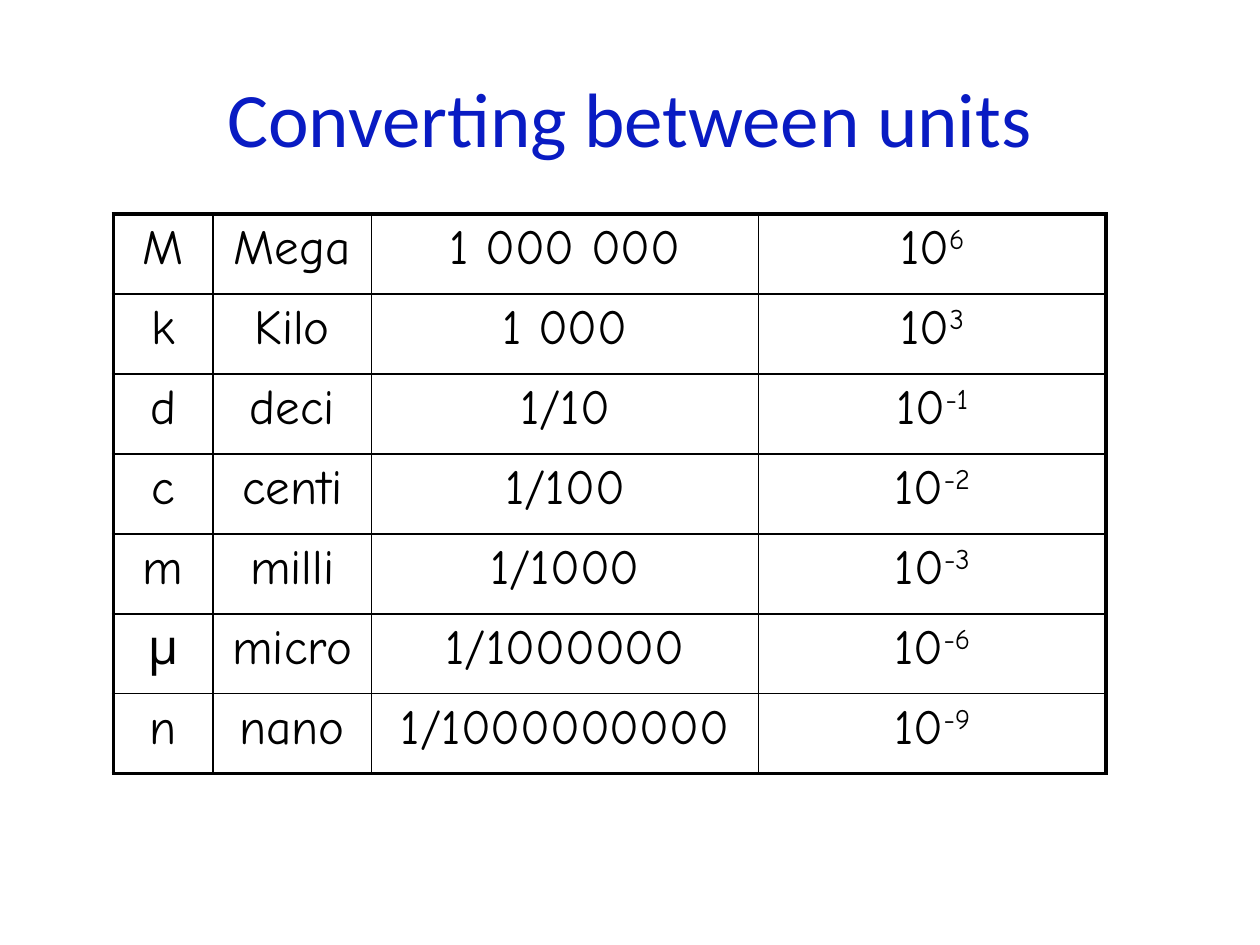
"""Build a slide with a table of metric prefixes and their powers of ten."""
import dataclasses

import lxml.etree
import pptx
import pptx.dml.color
import pptx.enum.text
import pptx.oxml.ns
import pptx.util

Inches = pptx.util.Inches
Pt = pptx.util.Pt
BLACK = "000000"
TITLE_BLUE = "091BC3"
THIN, THICK = 1, 2.25
COLUMN_WIDTHS = (0.79, 1.26, 3.07, 2.76)
TABLE_HEIGHT = 4.44


@dataclasses.dataclass(frozen=True)
class Prefix:
    symbol: str
    name: str
    factor: str
    exponent: str


PREFIXES = (
    Prefix("M", "Mega", "1 000 000", "6"),
    Prefix("k", "Kilo", "1 000", "3"),
    Prefix("d", "deci", "1/10", "-1"),
    Prefix("c", "centi", "1/100", "-2"),
    Prefix("m", "milli", "1/1000", "-3"),
    Prefix("μ", "micro", "1/1000000", "-6"),
    Prefix("n", "nano", "1/1000000000", "-9"),
)


def rgb(color: str) -> pptx.dml.color.RGBColor:
    return pptx.dml.color.RGBColor.from_string(color)


def add_run(paragraph, text: str, font_name: str, size: float, color: str, baseline: int = 0) -> None:
    run = paragraph.add_run()
    run.text = text
    run.font.name = font_name
    run.font.size = Pt(size)
    run.font.color.rgb = rgb(color)
    if baseline:
        run.font._element.set("baseline", str(baseline * 1000))


def add_border(cell, side: str, width: float) -> None:
    qn = pptx.oxml.ns.qn
    properties = cell._tc.get_or_add_tcPr()
    line = lxml.etree.SubElement(properties, qn(f"a:{side}"), w=str(Pt(width)))
    fill = lxml.etree.SubElement(line, qn("a:solidFill"))
    lxml.etree.SubElement(fill, qn("a:srgbClr"), val=BLACK)


def format_cell(cell, runs: tuple[tuple[str, int], ...], outer_sides: dict[str, bool]) -> None:
    paragraph = cell.text_frame.paragraphs[0]
    paragraph.alignment = pptx.enum.text.PP_ALIGN.CENTER
    paragraph.space_before = Pt(5.6)
    for text, baseline in runs:
        add_run(paragraph, text, "Comic Neue", 28, BLACK, baseline)
    for side, is_outer in outer_sides.items():
        add_border(cell, side, THICK if is_outer else THIN)
    cell.fill.background()


def add_title(slide, text: str) -> None:
    title = slide.shapes.title
    title.left, title.top = Inches(0.5), Inches(0.3)
    title.width, title.height = Inches(9), Inches(1.25)
    title.text_frame.vertical_anchor = pptx.enum.text.MSO_ANCHOR.MIDDLE
    paragraph = title.text_frame.paragraphs[0]
    paragraph.alignment = pptx.enum.text.PP_ALIGN.CENTER
    add_run(paragraph, text, "Calibri", 44, TITLE_BLUE)


def add_prefix_table(slide, prefixes: tuple[Prefix, ...]) -> None:
    last_row, last_column = len(prefixes) - 1, len(COLUMN_WIDTHS) - 1
    table = slide.shapes.add_table(
        len(prefixes), len(COLUMN_WIDTHS), Inches(0.9), Inches(1.7),
        Inches(sum(COLUMN_WIDTHS)), Inches(TABLE_HEIGHT),
    ).table
    table.first_row = table.horz_banding = False
    for column, width in zip(table.columns, COLUMN_WIDTHS):
        column.width = Inches(width)
    for row_index, prefix in enumerate(prefixes):
        table.rows[row_index].height = Inches(TABLE_HEIGHT / len(prefixes))
        row_runs = (
            ((prefix.symbol, 0),),
            ((prefix.name, 0),),
            ((prefix.factor, 0),),
            (("10", 0), (prefix.exponent, 30)),
        )
        for column_index, runs in enumerate(row_runs):
            outer_sides = {
                "lnL": column_index == 0,
                "lnR": column_index == last_column,
                "lnT": row_index == 0,
                "lnB": row_index == last_row,
            }
            format_cell(table.cell(row_index, column_index), runs, outer_sides)


def main() -> None:
    presentation = pptx.Presentation()
    presentation.slide_width, presentation.slide_height = Inches(10), Inches(7.5)
    slide = presentation.slides.add_slide(presentation.slide_layouts.get_by_name("Title Only"))
    add_title(slide, "Converting between units")
    add_prefix_table(slide, PREFIXES)
    presentation.save("out.pptx")


if __name__ == "__main__":
    main()
